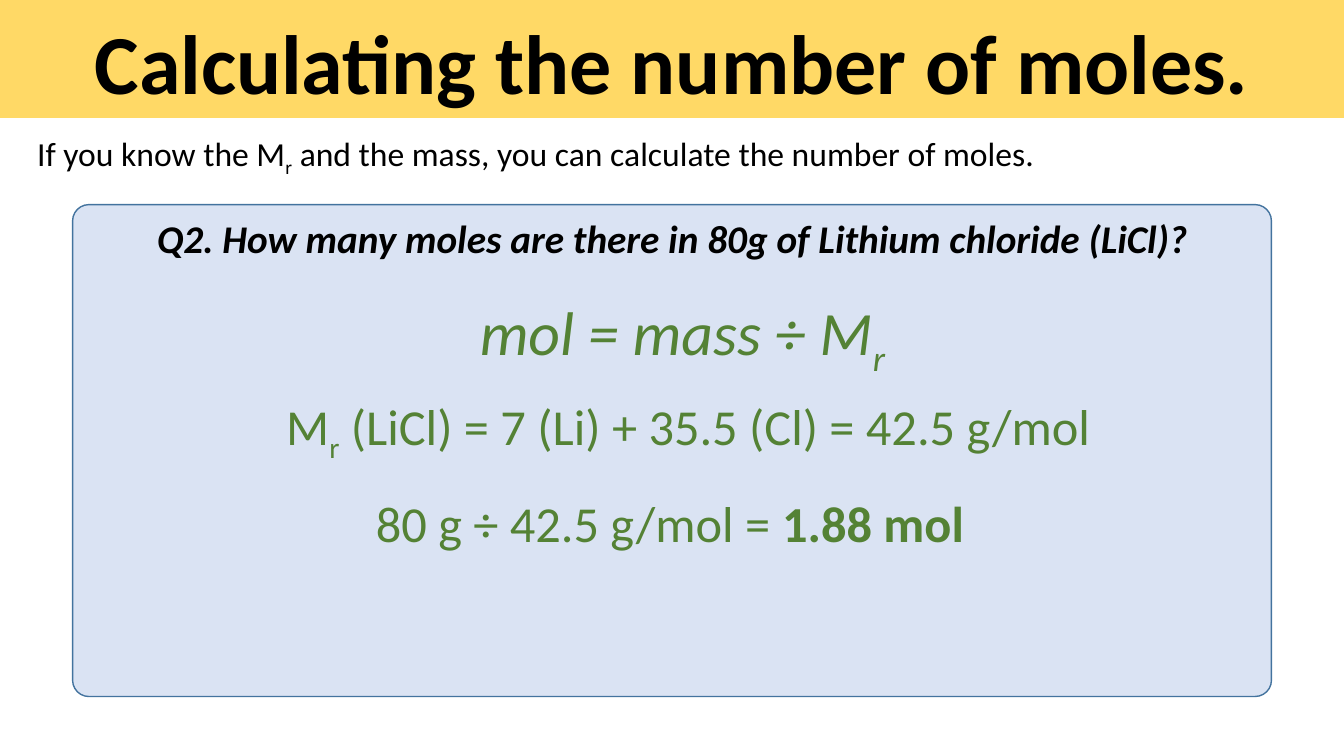
from dataclasses import dataclass

from pptx import Presentation
from pptx.dml.color import RGBColor
from pptx.enum.shapes import MSO_SHAPE
from pptx.enum.text import MSO_ANCHOR as Anchor, MSO_AUTO_SIZE as AutoSize, PP_ALIGN as Align
from pptx.slide import Slide
from pptx.text.text import TextFrame
from pptx.util import Emu, Pt

EMU_PER_PX = 9144  # 100 px to the inch


@dataclass(frozen=True)
class Theme:
    font: str = "Calibri"
    ink: str = "000000"
    answer: str = "548235"
    banner: str = "FFD966"
    panel: str = "DAE3F3"
    panel_line: str = "43739E"
    title_size: int = 60
    formula_size: int = 44
    working_size: int = 36
    question_size: int = 28
    intro_size: int = 24


THEME = Theme()


@dataclass(frozen=True)
class Box:
    left: int
    top: int
    width: int
    height: int

    def emu(self) -> list[Emu]:
        return [Emu(value * EMU_PER_PX)
                for value in (self.left, self.top, self.width, self.height)]


@dataclass(frozen=True)
class Piece:
    text: str
    bold: bool = False
    subscript: bool = False


@dataclass(frozen=True)
class Line:
    box: Box
    pieces: tuple[Piece, ...]
    size: int
    color: str = THEME.answer
    italic: bool = False


SUB_R = Piece("r", subscript=True)

LINES = (
    Line(Box(27, 127, 1010, 50),
         (Piece("If you know the M"), SUB_R,
          Piece(" and the mass, you can calculate the number of moles.")),
         THEME.intro_size, color=THEME.ink),
    Line(Box(466, 287, 428, 84),
         (Piece("mol = mass ÷ M"), SUB_R), THEME.formula_size, italic=True),
    Line(Box(274, 387, 827, 71),
         (Piece("M"), SUB_R, Piece(" (LiCl) = 7 (Li) + 35.5 (Cl) = 42.5 g/mol")),
         THEME.working_size),
    Line(Box(363, 483, 606, 71),
         (Piece("80 g ÷ 42.5 g/mol = "), Piece("1.88 mol", bold=True)),
         THEME.working_size),
)


def write(frame: TextFrame, *pieces: Piece, size: int, color: str = THEME.ink,
          italic: bool = False, align: Align = Align.LEFT) -> None:
    paragraph = frame.paragraphs[0]
    paragraph.alignment = align
    for piece in pieces:
        run = paragraph.add_run()
        run.text = piece.text
        font = run.font
        font.name = THEME.font
        font.size = Pt(size)
        font.bold = piece.bold
        font.italic = italic
        font.color.rgb = RGBColor.from_string(color)
        if piece.subscript:
            run._r.get_or_add_rPr().set("baseline", "-25000")


def add_banner_title(slide: Slide) -> None:
    title = slide.shapes.title
    title.left, title.top, title.width, title.height = Box(0, 0, 1333, 117).emu()
    title.fill.solid()
    title.fill.fore_color.rgb = RGBColor.from_string(THEME.banner)
    frame = title.text_frame
    frame.auto_size = AutoSize.NONE
    frame.vertical_anchor = Anchor.BOTTOM
    frame.paragraphs[0].line_spacing = 0.9
    write(frame, Piece("Calculating the number of moles.", bold=True),
          size=THEME.title_size, align=Align.CENTER)


def add_question_panel(slide: Slide) -> None:
    panel = slide.shapes.add_shape(MSO_SHAPE.ROUNDED_RECTANGLE,
                                   *Box(72, 203, 1189, 488).emu())
    panel.adjustments[0] = 0.033
    panel.shadow.inherit = False
    panel.fill.solid()
    panel.fill.fore_color.rgb = RGBColor.from_string(THEME.panel)
    panel.line.color.rgb = RGBColor.from_string(THEME.panel_line)
    panel.line.width = Pt(1)
    panel.text_frame.vertical_anchor = Anchor.TOP
    write(panel.text_frame,
          Piece("Q2. How many moles are there in 80g of Lithium chloride (LiCl)?", bold=True),
          size=THEME.question_size, italic=True, align=Align.CENTER)


def add_line(slide: Slide, line: Line) -> None:
    frame = slide.shapes.add_textbox(*line.box.emu()).text_frame
    frame.word_wrap = False
    frame.auto_size = AutoSize.SHAPE_TO_FIT_TEXT
    write(frame, *line.pieces, size=line.size, color=line.color, italic=line.italic)


def main() -> None:
    presentation = Presentation()
    presentation.slide_width = Emu(1333 * EMU_PER_PX)
    presentation.slide_height = Emu(750 * EMU_PER_PX)
    title_only = presentation.slide_layouts.get_by_name("Title Only")
    slide = presentation.slides.add_slide(title_only)
    add_banner_title(slide)
    add_question_panel(slide)
    for line in LINES:
        add_line(slide, line)
    presentation.save("out.pptx")


if __name__ == "__main__":
    main()
